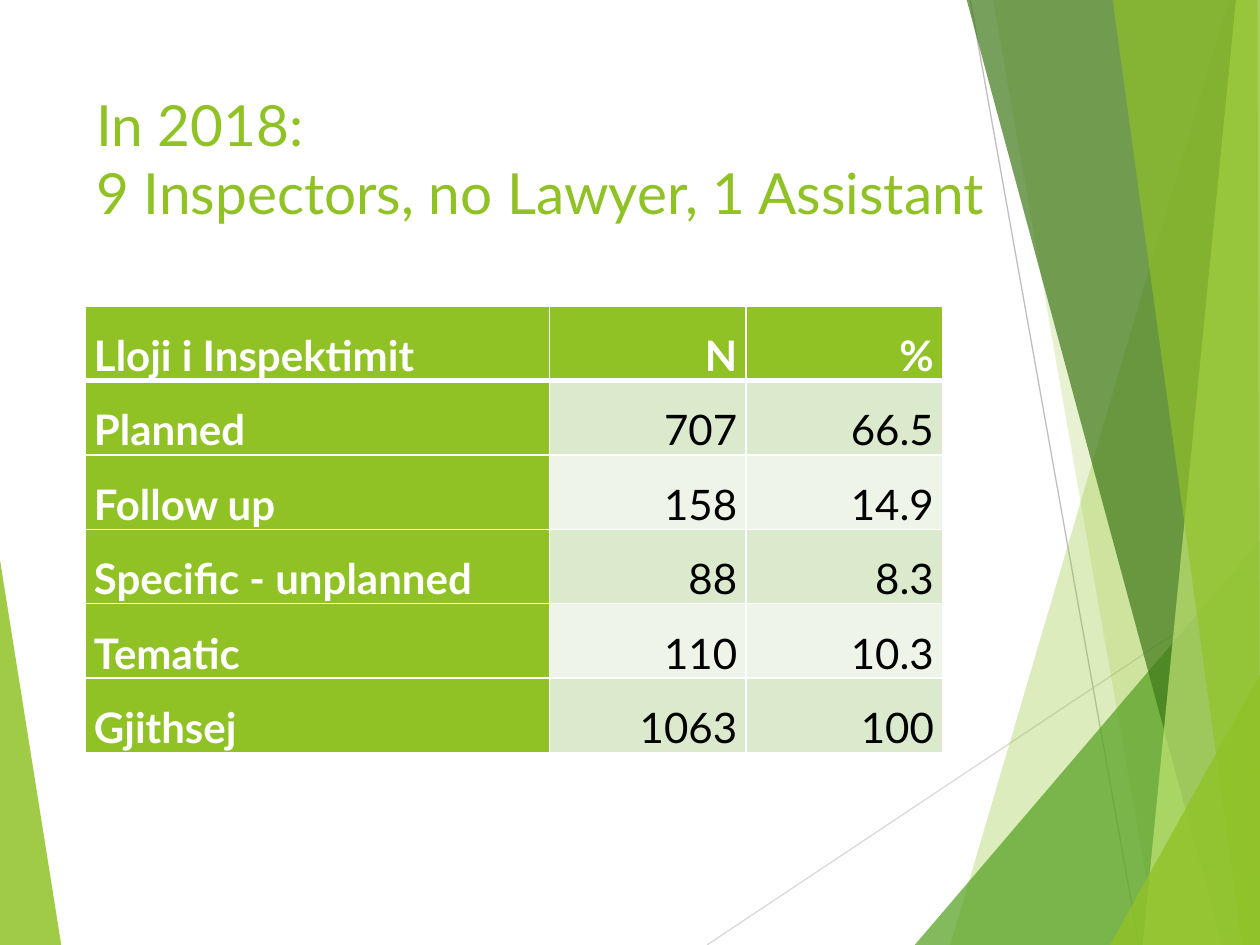
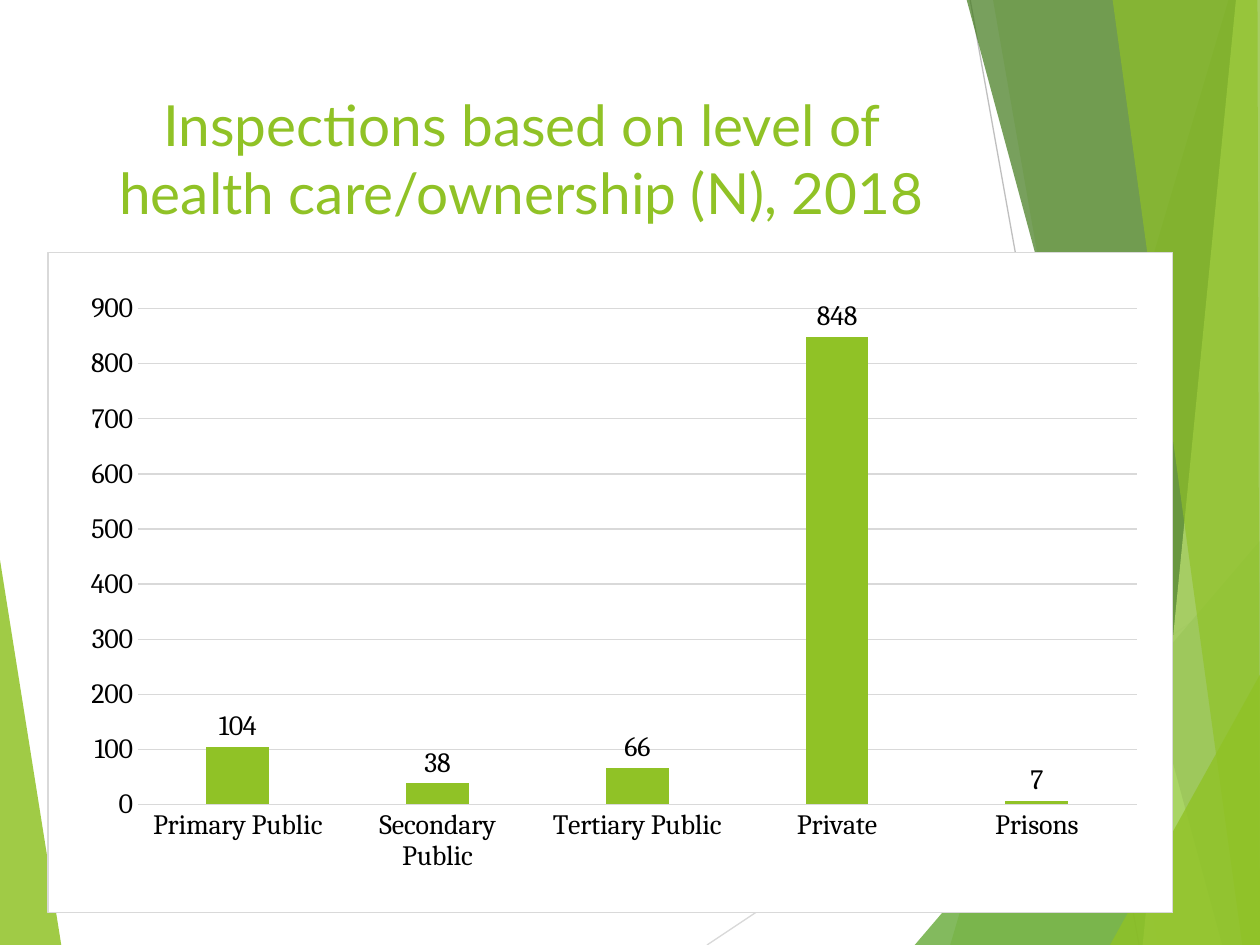
from dataclasses import dataclass

import pptx
import pptx.chart.data
import pptx.dml.color
import pptx.enum.chart
import pptx.enum.text
import pptx.oxml
import pptx.oxml.ns
import pptx.util
from pptx.util import Pt

COLORS = {
    "lime": "90C226",
    "green": "54A021",
    "forest": "3F7819",
    "pale": "C0E474",
    "band_dark": "DBE9CD",
    "band_light": "EEF4E8",
    "rule": "D9D9D9",
    "rule_dark": "BFBFBF",
    "white": "FFFFFF",
    "black": "000000",
}
TITLE_FONT = "Lato"
CHART_FONT = "Cambria"
WIDTH, HEIGHT = 720, 540
ALIGN = pptx.enum.text.PP_ALIGN
ANCHOR = pptx.enum.text.MSO_ANCHOR


@dataclass(frozen=True)
class Ray:
    start: tuple[float, float]
    end: tuple[float, float]
    color: str


@dataclass(frozen=True)
class Shard:
    points: tuple[tuple[float, float], ...]
    color: str
    opacity: int


def right_shard(top: float, bottom: float, color: str, opacity: int) -> Shard:
    return Shard(((top, 0), (bottom, HEIGHT), (WIDTH, HEIGHT), (WIDTH, 0)), color, opacity)


def corner_shard(left: float, top: float, color: str, opacity: int) -> Shard:
    return Shard(((left, HEIGHT), (WIDTH, top), (WIDTH, HEIGHT)), color, opacity)


BACKDROP = (
    Shard(((0, 320), (35, HEIGHT), (0, HEIGHT)), "lime", 85),
    Ray((404, HEIGHT), (WIDTH, 329.5), "rule"),
    Ray((554.4, 0), (650.9, HEIGHT), "rule_dark"),
    right_shard(702, 543, "lime", 30),
    right_shard(567.5, 661.7, "lime", 20),
    corner_shard(522.7, 309, "green", 72),
    right_shard(552.4, 698.4, "forest", 70),
    right_shard(706.3, 653, "pale", 70),
    Shard(((635.8, 0), (709.9, HEIGHT), (WIDTH, HEIGHT), (718.6, 0)), "lime", 65),
    corner_shard(634.3, 385.5, "lime", 80),
)

INSPECTIONS = (
    ("Lloji i Inspektimit", "N", "%"),
    ("Planned", "707", "66.5"),
    ("Follow up", "158", "14.9"),
    ("Specific - unplanned", "88", "8.3"),
    ("Tematic", "110", "10.3"),
    ("Gjithsej", "1063", "100"),
)
COLUMN_WIDTHS = (265.5, 112.4, 112.4)
ROW_HEIGHT = 42.5

CARE_LEVELS = {
    "Primary Public": 104,
    "Secondary Public": 38,
    "Tertiary Public": 66,
    "Private": 848,
    "Prisons": 7,
}


def rgb(color: str) -> pptx.dml.color.RGBColor:
    return pptx.dml.color.RGBColor.from_string(COLORS[color])


def paint(fill, color: str) -> None:
    fill.solid()
    fill.fore_color.rgb = rgb(color)


def line_xml(tag: str, color: str, width: float):
    return (
        f'<{tag} w="{Pt(width)}"><a:solidFill><a:srgbClr val="{COLORS[color]}"/>'
        f"</a:solidFill></{tag}>"
    )


def write(frame, text: str, *, size: float, color: str, bold: bool = False,
          align=ALIGN.LEFT, spacing: float = 1.0) -> None:
    paragraph = frame.paragraphs[0]
    paragraph.text = text
    paragraph.alignment = align
    paragraph.line_spacing = spacing
    for run in paragraph.runs:
        run.font.name = TITLE_FONT
        run.font.size = Pt(size)
        run.font.bold = bold
        run.font.color.rgb = rgb(color)


def draw_ray(slide, ray: Ray) -> None:
    connector = slide.shapes.add_connector(
        pptx.enum.shapes.MSO_CONNECTOR.STRAIGHT,
        *(Pt(value) for value in ray.start + ray.end),
    )
    connector.line.color.rgb = rgb(ray.color)
    connector.line.width = Pt(0.75)
    properties = connector.element.spPr
    properties.append(properties.makeelement(pptx.oxml.ns.qn("a:effectLst"), {}))


def draw_shard(slide, shard: Shard) -> None:
    first, *others = [(Pt(x), Pt(y)) for x, y in shard.points]
    builder = slide.shapes.build_freeform(*first)
    builder.add_line_segments(others, close=True)
    shape = builder.convert_to_shape()
    shape.shadow.inherit = False
    shape.line.fill.background()
    paint(shape.fill, shard.color)
    tint = shape.element.spPr.find(".//" + pptx.oxml.ns.qn("a:srgbClr"))
    alpha = tint.makeelement(pptx.oxml.ns.qn("a:alpha"), {"val": str(shard.opacity * 1000)})
    tint.append(alpha)


def add_page(presentation, title: str, width: float, align):
    slide = presentation.slides.add_slide(presentation.slide_layouts[6])
    for part in BACKDROP:
        if isinstance(part, Ray):
            draw_ray(slide, part)
        else:
            draw_shard(slide, part)
    heading = slide.shapes.add_textbox(Pt(48), Pt(48), Pt(width), Pt(104))
    heading.text_frame.word_wrap = True
    write(heading.text_frame, title, size=32.4, color="lime", align=align)
    return slide


def add_borders(cell, bottom: float) -> None:
    properties = cell._tc.get_or_add_tcPr()
    namespace = pptx.oxml.ns.nsdecls("a")
    for side, width in (("L", 1), ("R", 1), ("T", 1), ("B", bottom)):
        border = line_xml(f"a:ln{side}", "white", width)
        properties.append(pptx.oxml.parse_xml(border.replace(" w=", f" {namespace} w=", 1)))


def add_inspection_table(slide) -> None:
    table = slide.shapes.add_table(
        len(INSPECTIONS), len(COLUMN_WIDTHS), Pt(48.5), Pt(175),
        Pt(sum(COLUMN_WIDTHS)), Pt(ROW_HEIGHT * len(INSPECTIONS)),
    ).table
    for column, width in zip(table.columns, COLUMN_WIDTHS):
        column.width = Pt(width)
    for row_index, values in enumerate(INSPECTIONS):
        table.rows[row_index].height = Pt(ROW_HEIGHT)
        for column_index, value in enumerate(values):
            cell = table.cell(row_index, column_index)
            heading = row_index == 0 or column_index == 0
            band = "band_dark" if row_index % 2 else "band_light"
            cell.margin_left = cell.margin_right = Pt(5.2)
            cell.margin_top = cell.margin_bottom = 0
            cell.vertical_anchor = ANCHOR.BOTTOM
            add_borders(cell, bottom=1 if row_index else 3)
            paint(cell.fill, "lime" if heading else band)
            write(cell.text_frame, value, size=24, bold=heading, spacing=1.07,
                  color="white" if heading else "black",
                  align=ALIGN.RIGHT if column_index else ALIGN.LEFT)


def frame_chart(chart) -> None:
    namespaces = pptx.oxml.ns.nsdecls("c", "a")
    chart_node = chart.element.find(pptx.oxml.ns.qn("c:chart"))
    chart_node.addnext(pptx.oxml.parse_xml(
        f'<c:spPr {namespaces}><a:solidFill><a:srgbClr val="{COLORS["white"]}"/>'
        f'</a:solidFill>{line_xml("a:ln", "rule", 0.75)}</c:spPr>'
    ))
    plot_area = chart_node.find(pptx.oxml.ns.qn("c:plotArea"))
    for layout in plot_area.findall(pptx.oxml.ns.qn("c:layout")):
        plot_area.remove(layout)
    settings = {"layoutTarget": "inner", "xMode": "edge", "yMode": "edge",
                "x": 0.08, "y": 0.085, "w": 0.888, "h": 0.751}
    children = "".join(f'<c:{tag} val="{value}"/>' for tag, value in settings.items())
    plot_area.insert(0, pptx.oxml.parse_xml(
        f"<c:layout {namespaces}><c:manualLayout>{children}</c:manualLayout></c:layout>"
    ))


def add_care_level_chart(slide) -> None:
    data = pptx.chart.data.CategoryChartData()
    data.categories = list(CARE_LEVELS)
    data.add_series("Series 1", list(CARE_LEVELS.values()))
    chart = slide.shapes.add_chart(
        pptx.enum.chart.XL_CHART_TYPE.COLUMN_CLUSTERED,
        Pt(27), Pt(144), Pt(643.5), Pt(378), data,
    ).chart
    chart.has_title = False
    chart.has_legend = False
    chart.font.name = CHART_FONT
    chart.font.size = Pt(16)
    chart.font.color.rgb = rgb("black")

    levels, counts = chart.category_axis, chart.value_axis
    for axis in (levels, counts):
        axis.major_tick_mark = pptx.enum.chart.XL_TICK_MARK.NONE
        axis.minor_tick_mark = pptx.enum.chart.XL_TICK_MARK.NONE
    counts.minimum_scale, counts.maximum_scale, counts.major_unit = 0, 900, 100
    counts.format.line.fill.background()
    for line in (levels.format.line, counts.major_gridlines.format.line):
        line.color.rgb = rgb("rule")
        line.width = Pt(0.75)

    columns = chart.plots[0]
    columns.vary_by_categories = False
    columns.gap_width = 219
    columns.overlap = -27
    paint(columns.series[0].format.fill, "lime")
    columns.has_data_labels = True
    columns.data_labels.show_value = True
    columns.data_labels.position = pptx.enum.chart.XL_LABEL_POSITION.OUTSIDE_END
    frame_chart(chart)


def main() -> None:
    presentation = pptx.Presentation()
    presentation.slide_width = Pt(WIDTH)
    presentation.slide_height = Pt(HEIGHT)
    add_inspection_table(add_page(
        presentation, "In 2018:\n9 Inspectors, no Lawyer, 1 Assistant", 528, ALIGN.LEFT,
    ))
    add_care_level_chart(add_page(
        presentation, "Inspections based on level of health care/ownership (N), 2018",
        500, ALIGN.CENTER,
    ))
    presentation.save("out.pptx")


if __name__ == "__main__":
    main()
